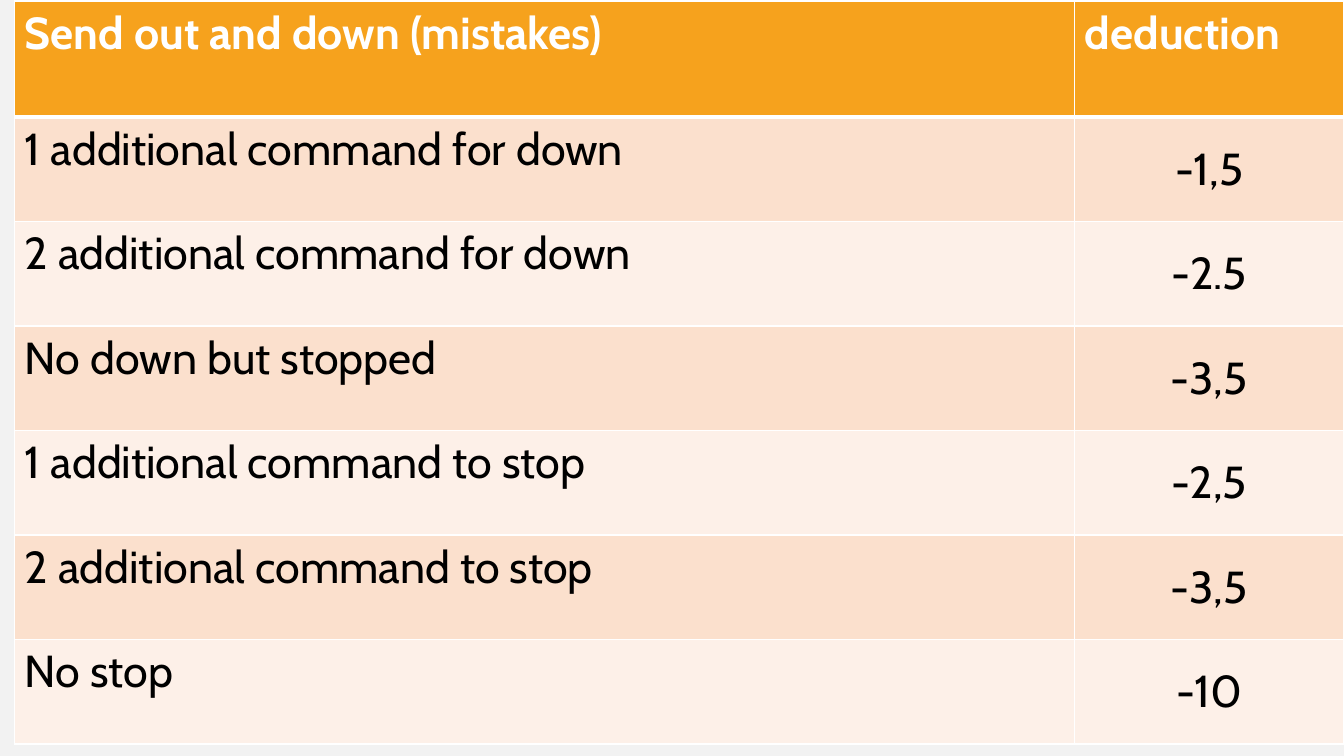
from dataclasses import dataclass

from lxml.etree import SubElement
from pptx import Presentation
from pptx.dml.color import RGBColor as Color
from pptx.enum.text import MSO_ANCHOR as Anchor, PP_ALIGN as Align
from pptx.oxml.ns import qn
from pptx.util import Pt


@dataclass(frozen=True)
class Theme:
    font: str = "Cabin"
    size: float = 32
    background: str = "F2F2F2"
    header: str = "F6A21D"
    bands: tuple = ("FBE0CD", "FDF0E8")
    header_text: str = "FFFFFF"
    text: str = "000000"
    border: str = "FFFFFF"
    thin: float = 1
    thick: float = 3


THEME = Theme()
HEADINGS = ("Send out and down (mistakes)", "deduction")
DEDUCTIONS = (
    ("1 additional command for down", "-1,5"),
    ("2 additional command for down", "-2.5"),
    ("No down but stopped", "-3,5"),
    ("1 additional command to stop", "-2,5"),
    ("2 additional command to stop", "-3,5"),
    ("No stop", "-10"),
)


def set_borders(cell, widths):
    properties = cell._tc.get_or_add_tcPr()
    for index, (side, width) in enumerate(widths.items()):
        line = SubElement(properties, qn(f"a:ln{side}"), w=str(Pt(width)))
        fill = SubElement(line, qn("a:solidFill"))
        SubElement(fill, qn("a:srgbClr"), val=THEME.border)
        properties.insert(index, line)


def fill_cell(cell, text, fill, color, bold, centred):
    cell.fill.solid()
    cell.fill.fore_color.rgb = Color.from_string(fill)
    cell.text = text
    cell.vertical_anchor = Anchor.MIDDLE if centred else Anchor.TOP
    paragraph = cell.text_frame.paragraphs[0]
    paragraph.alignment = Align.CENTER if centred else Align.LEFT
    paragraph.font.name = THEME.font
    paragraph.font.size = Pt(THEME.size)
    paragraph.font.bold = bold
    paragraph.font.color.rgb = Color.from_string(color)


def add_deduction_table(slide, left, top, width, height):
    rows = (HEADINGS, *DEDUCTIONS)
    table = slide.shapes.add_table(
        len(rows), len(HEADINGS), Pt(left), Pt(top), Pt(width), Pt(height)
    ).table
    deduction_width = 192.2
    table.columns[0].width = Pt(width - deduction_width)
    table.columns[1].width = Pt(deduction_width)
    header_height = 82.8
    body_height = (height - header_height) / len(DEDUCTIONS)

    for row, texts in enumerate(rows):
        is_header = row == 0
        table.rows[row].height = Pt(header_height if is_header else body_height)
        fill = THEME.header if is_header else THEME.bands[(row - 1) % 2]
        color = THEME.header_text if is_header else THEME.text
        widths = {
            "L": THEME.thin,
            "R": THEME.thin,
            "T": THEME.thick if row == 1 else THEME.thin,
            "B": THEME.thick if is_header else THEME.thin,
        }
        for column, text in enumerate(texts):
            cell = table.cell(row, column)
            centred = column == 1 and not is_header
            fill_cell(cell, text, fill, color, is_header, centred)
            set_borders(cell, widths)


def add_deduction_slide(presentation):
    slide = presentation.slides.add_slide(presentation.slide_layouts[6])
    slide.background.fill.solid()
    slide.background.fill.fore_color.rgb = Color.from_string(THEME.background)
    add_deduction_table(slide, 10.4, 0.7, 949.6, 530.8)


def main():
    presentation = Presentation()
    presentation.slide_width = Pt(960)
    presentation.slide_height = Pt(540)
    add_deduction_slide(presentation)
    presentation.save("out.pptx")


if __name__ == "__main__":
    main()
